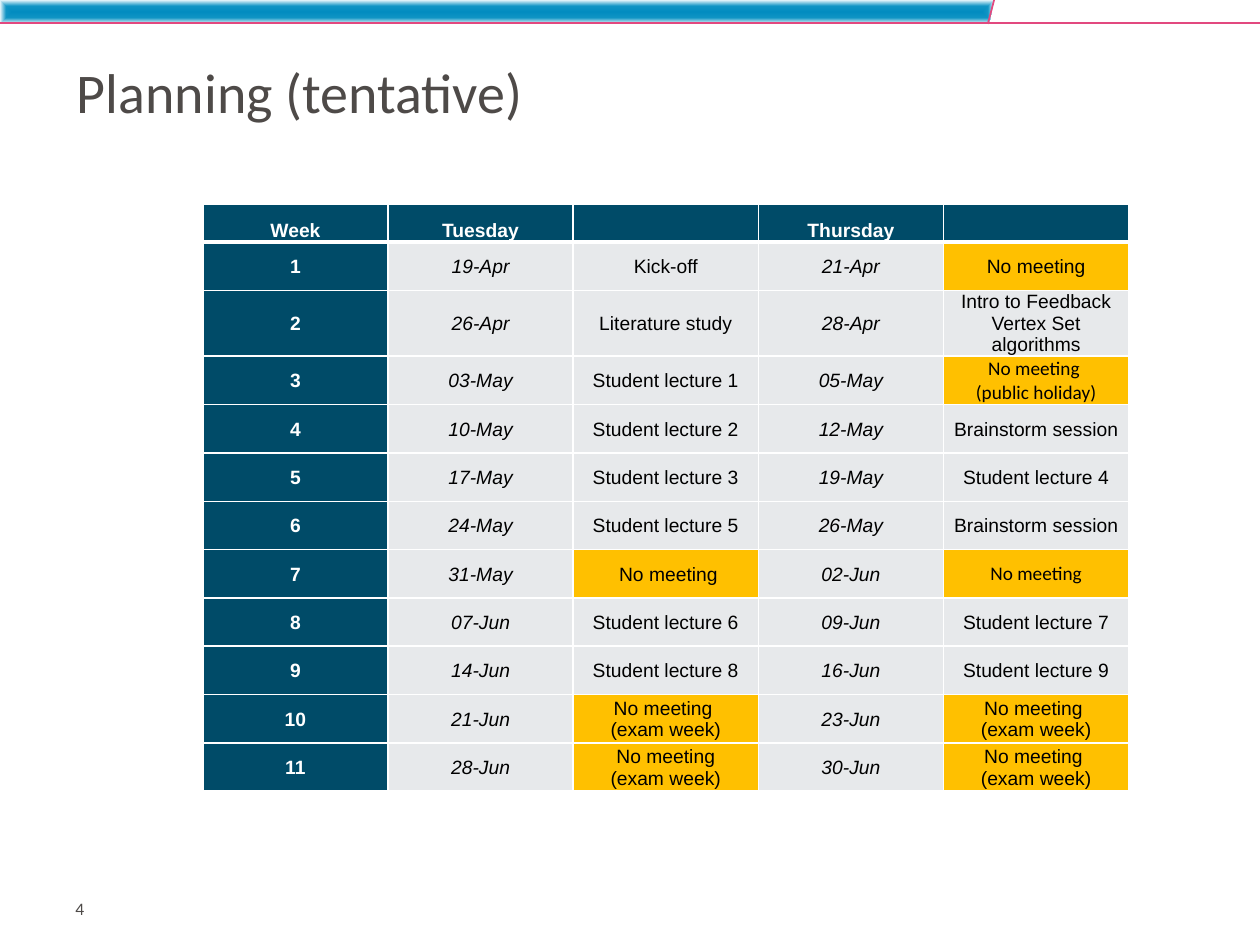
from copy import deepcopy
from lxml import etree
from pptx import Presentation
from pptx.dml.color import RGBColor
from pptx.enum.shapes import MSO_CONNECTOR
from pptx.enum.text import MSO_ANCHOR, MSO_AUTO_SIZE, PP_ALIGN
from pptx.oxml import parse_xml
from pptx.oxml.ns import nsdecls, qn
from pptx.util import Inches, Pt

LEFT, CENTER = PP_ALIGN.LEFT, PP_ALIGN.CENTER
MIDDLE, BOTTOM, TOP = MSO_ANCHOR.MIDDLE, MSO_ANCHOR.BOTTOM, MSO_ANCHOR.TOP
STRAIGHT = MSO_CONNECTOR.STRAIGHT
NO_FIT = MSO_AUTO_SIZE.NONE

NAVY = RGBColor(0x00, 0x4B, 0x68)
GRAY = RGBColor(0xE7, 0xE9, 0xEB)
AMBER = RGBColor(0xFF, 0xC0, 0x00)
PINK = RGBColor(0xE2, 0x49, 0x7F)
TEXT = RGBColor(0x4E, 0x4A, 0x48)
BLACK = RGBColor(0x00, 0x00, 0x00)
WHITE = RGBColor(0xFF, 0xFF, 0xFF)

TITLE = "Planning (tentative)"
PAGE = "4"
EXAM = "No meeting \n(exam week)"
HEADER = ("Week", "Tuesday", "", "Thursday", "")
WEEKS = [
    ("19-Apr", "Kick-off", "21-Apr", "No meeting"),
    ("26-Apr", "Literature study", "28-Apr", "Intro to Feedback Vertex Set algorithms"),
    ("03-May", "Student lecture 1", "05-May", "No meeting \n(public holiday)"),
    ("10-May", "Student lecture 2", "12-May", "Brainstorm session"),
    ("17-May", "Student lecture 3", "19-May", "Student lecture 4"),
    ("24-May", "Student lecture 5", "26-May", "Brainstorm session"),
    ("31-May", " No meeting", "02-Jun", "No meeting"),
    ("07-Jun", "Student lecture 6", "09-Jun", "Student lecture 7"),
    ("14-Jun", "Student lecture 8", "16-Jun", "Student lecture 9"),
    ("21-Jun", EXAM, "23-Jun", EXAM),
    ("28-Jun", " " + EXAM, "30-Jun", EXAM),
]
CALIBRI_CELLS = {(3, 4), (7, 4)}
TABLE_BOX = (1.61, 1.62, 7.35, 4.52)
HEADER_HEIGHT = 0.3

BAR = [(0, 0), (7.89, 0), (7.85, 0.19), (0, 0.19)]
BAR_STOPS = [(0, "038CC0"), (49, "0F94C4"), (100, "EEF9FD")]
RULES = [((7.89, 0), (7.84, 0.19)), ((10, 0.18), (0, 0.18))]


def write(p, text, align, color, **font):
    p.text = text
    p.alignment = align
    for r in p.runs or [p.add_run()]:
        for name, value in font.items():
            setattr(r.font, name, value)
        r.font.color.rgb = color
    for br in p._p.findall(qn("a:br")):
        br.append(deepcopy(p.runs[0]._r.rPr))


def set_borders(cell, **widths):
    tcPr = cell._tc.get_or_add_tcPr()
    for side in "LRTB":
        ln = etree.SubElement(tcPr, qn(f"a:ln{side}"), w=str(Pt(widths.get(side, 1))))
        fill = etree.SubElement(ln, qn("a:solidFill"))
        etree.SubElement(fill, qn("a:srgbClr"), val=str(WHITE))


def add_bar(s):
    points = [(Inches(x), Inches(y)) for x, y in BAR]
    builder = s.shapes.build_freeform(*points[0])
    builder.add_line_segments(points[1:])
    sp = builder.convert_to_shape()
    sp.shadow.inherit = False
    sp.line.fill.background()
    stops = "".join(
        f'<a:gs pos="{pos * 1000}"><a:srgbClr val="{color}"/></a:gs>'
        for pos, color in BAR_STOPS
    )
    sp._element.spPr.find(qn("a:custGeom")).addnext(parse_xml(
        f'<a:gradFill {nsdecls("a")}><a:gsLst>{stops}</a:gsLst><a:path path="shape">'
        '<a:fillToRect l="50000" t="50000" r="50000" b="50000"/></a:path></a:gradFill>'
    ))


def add_rule(s, start, end):
    line = s.shapes.add_connector(STRAIGHT, *(Inches(v) for v in start + end))
    line.line.color.rgb = PINK
    line.line.width = Pt(1)
    etree.SubElement(line._element.spPr, qn("a:effectLst"))


def fill_cell(cell, row, col, text):
    header, label = row == 0, row == 0 or col == 0
    margins = dict(margin_left=0.01, margin_right=0.01, margin_top=0.01, margin_bottom=0)
    for name, value in margins.items():
        setattr(cell, name, Inches(value))
    cell.vertical_anchor = BOTTOM if header else MIDDLE
    set_borders(cell, T=3 if row == 1 else 1, B=3 if header else 1)
    cell.fill.solid()
    cell.fill.fore_color.rgb = NAVY if label else AMBER if "No meeting" in text else GRAY
    write(cell.text_frame.paragraphs[0], text, CENTER, WHITE if label else BLACK,
          name="Calibri" if (row, col) in CALIBRI_CELLS else "Arial",
          size=Pt(11), bold=label, italic=not label and col in (1, 3))


def add_planning(s):
    rows = [HEADER] + [(str(n), *week) for n, week in enumerate(WEEKS, 1)]
    box = [Inches(v) for v in TABLE_BOX]
    table = s.shapes.add_table(len(rows), len(HEADER), *box).table
    for column in table.columns:
        column.width = Inches(TABLE_BOX[2] / len(HEADER))
    week_height = (TABLE_BOX[3] - HEADER_HEIGHT) / len(WEEKS)
    for i, row in enumerate(rows):
        table.rows[i].height = Inches(week_height if i else HEADER_HEIGHT)
        for j, text in enumerate(row):
            fill_cell(table.cell(i, j), i, j, text)


def place_text(sp, box, text, size, **frame):
    sp.left, sp.top, sp.width, sp.height = (Inches(v) for v in box)
    tf = sp.text_frame
    for name, value in dict(frame, word_wrap=True, auto_size=NO_FIT).items():
        setattr(tf, name, value)
    write(tf.paragraphs[0], text, LEFT, TEXT, name="Calibri", size=Pt(size))


def main():
    prs = Presentation()
    prs.slide_width, prs.slide_height = Inches(10), Inches(7.5)
    s = prs.slides.add_slide(prs.slide_layouts[5])
    add_bar(s)
    for start, end in RULES:
        add_rule(s, start, end)
    place_text(s.shapes.title, (0.51, 0.38, 9, 0.69), TITLE, 32, vertical_anchor=MIDDLE)
    add_planning(s)
    place_text(s.shapes.add_textbox(0, 0, 0, 0), (0.5, 7.13, 2.14, 0.3), PAGE, 10,
               vertical_anchor=TOP, margin_top=0, margin_bottom=Inches(0.05))
    prs.save("out.pptx")


if __name__ == "__main__":
    main()
